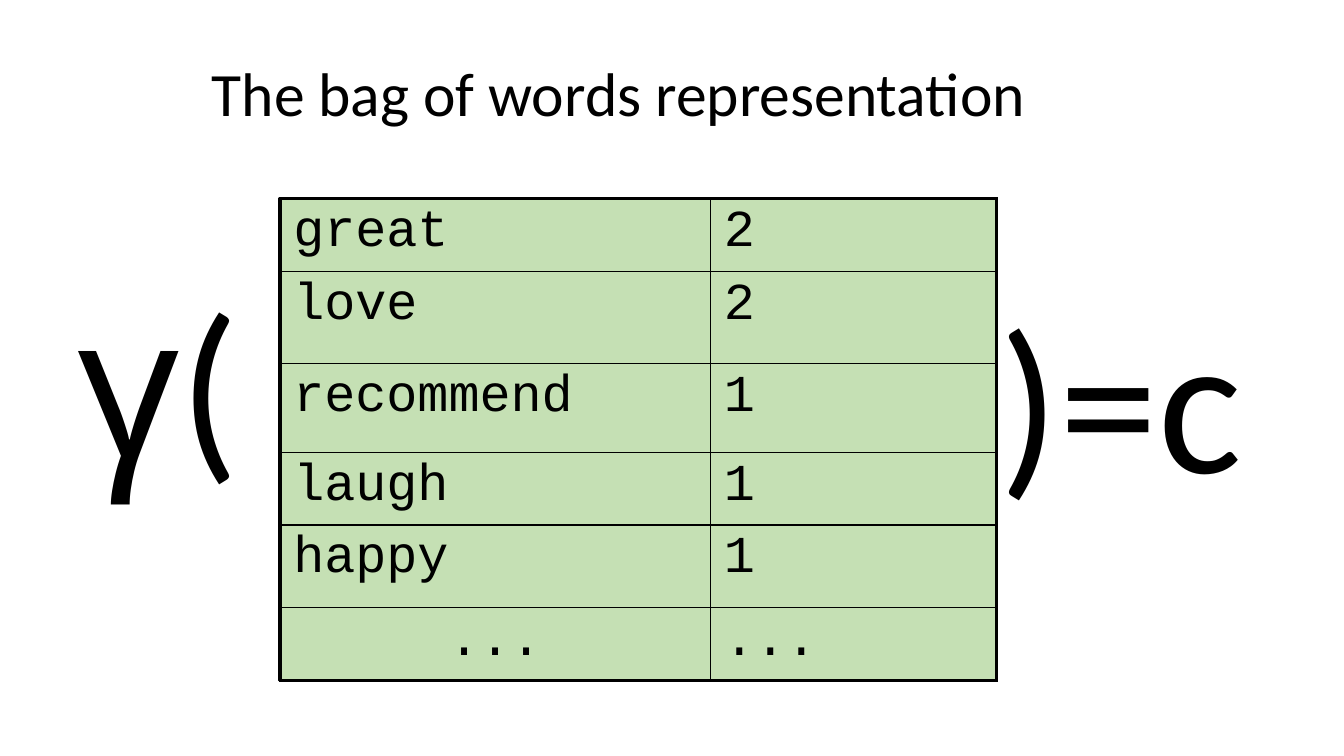
from pptx import Presentation
from pptx.dml.color import RGBColor
from pptx.enum import shapes, text
from pptx.oxml import parse_xml
from pptx.oxml.ns import nsdecls
from pptx.util import Pt

COLORS = {"ink": "000000", "green": "C5E0B4"}
INK = RGBColor.from_string(COLORS["ink"])
WORDS = [("great", "2"), ("love", "2"), ("recommend", "1"),
         ("laugh", "1"), ("happy", "1"), ("...", "...")]
ROW_HEIGHTS = [52, 65.5, 63.5, 52, 59, 52.5]
COL_WIDTHS = [307.5, 204.5]
THICK, THIN = 2.25, 1


def style(r, font, size):
    r.font.name = font
    r.font.size = Pt(size)
    r.font.color.rgb = INK


def add_border(cell, side, width):
    cell._tc.get_or_add_tcPr().append(parse_xml(
        f'<a:{side} {nsdecls("a")} w="{Pt(width)}"><a:solidFill>'
        f'<a:srgbClr val="{COLORS["ink"]}"/></a:solidFill></a:{side}>'))


prs = Presentation()
prs.slide_width, prs.slide_height = Pt(960), Pt(540)
s = prs.slides.add_slide(prs.slide_layouts[5])

title = s.shapes.title
title.left, title.top, title.width, title.height = Pt(144), Pt(30), Pt(784), Pt(78)
title.text_frame.text = "The bag of words representation"
title.text_frame.vertical_anchor = text.MSO_ANCHOR.MIDDLE
p = title.text_frame.paragraphs[0]
p.alignment = text.PP_ALIGN.LEFT
p.line_spacing = 0.9
style(p.runs[0], "Calibri", 44)

sp = s.shapes.add_shape(shapes.MSO_SHAPE.RECTANGLE, Pt(200), Pt(142), Pt(512), Pt(344))
sp.shadow.inherit = False
sp.fill.solid()
sp.fill.fore_color.rgb = RGBColor.from_string(COLORS["green"])
sp.line.color.rgb = INK
sp.line.width = Pt(THICK)

for left, top, width, wrap, parts in [
    (48, 182, 144, True, [("γ", "Noto Sans"), ("(", "Calibri")]),
    (707, 193, 189.5, False, [(")=c", "Calibri")]),
]:
    box = s.shapes.add_textbox(Pt(left), Pt(top), Pt(width), Pt(178.5))
    tf = box.text_frame
    tf.word_wrap = wrap
    for part, font in parts:
        r = tf.paragraphs[0].add_run()
        r.text = part
        style(r, font, 141.3)

table = s.shapes.add_table(len(WORDS), 2, Pt(200), Pt(142), Pt(512), Pt(344.5)).table
table.first_row = table.horz_banding = False
for col, width in zip(table.columns, COL_WIDTHS):
    col.width = Pt(width)
last = len(WORDS) - 1
for i, (words, height) in enumerate(zip(WORDS, ROW_HEIGHTS)):
    table.rows[i].height = Pt(height)
    for j, word in enumerate(words):
        cell = table.cell(i, j)
        cell.margin_left = cell.margin_right = Pt(9.5)
        cell.margin_top = cell.margin_bottom = Pt(3.6)
        cell.text_frame.text = word
        p = cell.text_frame.paragraphs[0]
        style(p.runs[0], "Courier New", 37)
        if (i, j) == (last, 0):
            p.alignment = text.PP_ALIGN.CENTER
        for side, outer in [("lnL", j == 0), ("lnR", j == 1),
                            ("lnT", i == 0), ("lnB", i == last)]:
            add_border(cell, side, THICK if outer else THIN)
        cell.fill.background()

prs.save("out.pptx")
